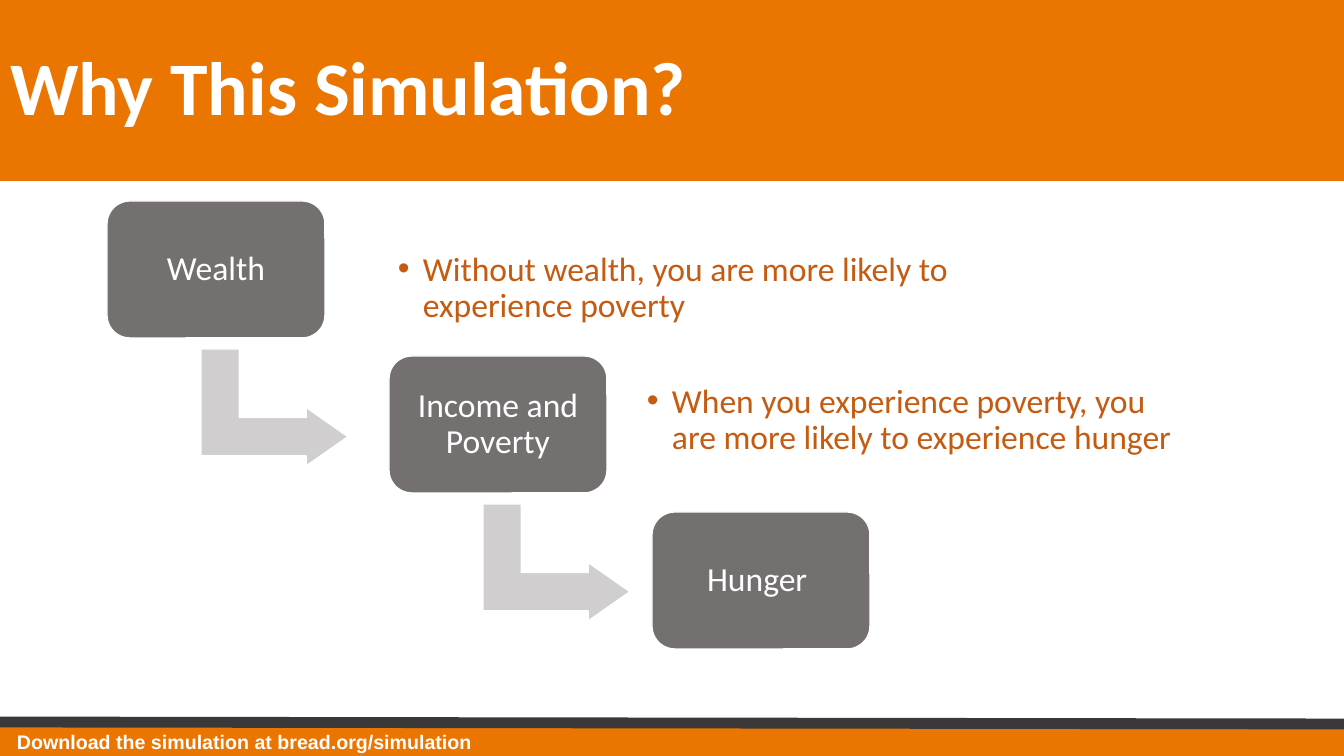
import pptx
import pptx.util
import pptx.dml.color
import pptx.enum.shapes
import pptx.enum.text
import lxml.etree

RGBColor = pptx.dml.color.RGBColor
SHAPES = pptx.enum.shapes.MSO_SHAPE
ALIGN = pptx.enum.text.PP_ALIGN
ANCHOR = pptx.enum.text.MSO_ANCHOR

ORANGE = RGBColor(0xEA, 0x75, 0x00)
RUST = RGBColor(0xC5, 0x5A, 0x11)
GREY = RGBColor(0x75, 0x70, 0x70)
PALE = RGBColor(0xD0, 0xCE, 0xCE)
CHARCOAL = RGBColor(0x3A, 0x38, 0x38)
WHITE = RGBColor(0xFF, 0xFF, 0xFF)

EMU_PER_PX = 914400 / 100.8
WIDTH, HEIGHT = 1344, 756
CARD_WIDTH, CARD_HEIGHT = 218, 137
DRAWING = "http://schemas.openxmlformats.org/drawingml/2006/main"

# Card label, card left and top, bullet text, bullet box
STEPS = [
    ("Wealth", 107, 201, "Without wealth, you are more likely to experience poverty",
     (388, 233, 659, 111)),
    ("Income and Poverty", 389, 356,
     "When you experience poverty, you are more likely to experience hunger",
     (637, 365, 563, 111)),
    ("Hunger ", 652, 512, None, None),
]


def px(length):
    return pptx.util.Emu(round(length * EMU_PER_PX))


def place(box):
    return [px(length) for length in box]


def add_child(parent, tag, **attributes):
    return lxml.etree.SubElement(parent, f"{{{DRAWING}}}{tag}", attributes)


def add_bullet(para, color, indent):
    properties = para._p.get_or_add_pPr()
    properties.set("marL", str(px(indent)))
    properties.set("indent", str(-px(indent)))
    add_child(add_child(properties, "buClr"), "srgbClr", val=str(color))
    add_child(properties, "buFont", typeface="Arial")
    add_child(properties, "buChar", char="•")


def write(shape, text, size, color=WHITE, font="Calibri", bold=False, align=ALIGN.LEFT,
          anchor=ANCHOR.MIDDLE, insets=(10, 10), spacing=0.9, bullet=False):
    frame = shape.text_frame
    frame.word_wrap = True
    frame.vertical_anchor = anchor
    frame.margin_left = frame.margin_right = px(insets[0])
    frame.margin_top = frame.margin_bottom = px(insets[1])
    para = frame.paragraphs[0]
    para.alignment = align
    para.line_spacing = spacing
    if bullet:
        add_bullet(para, color, 25)
    span = para.add_run()
    span.text = text
    span.font.name = font
    span.font.size = pptx.util.Pt(size)
    span.font.bold = bold
    span.font.color.rgb = color


def add_block(page, kind, box, fill, outline=None):
    shape = page.shapes.add_shape(kind, *place(box))
    shape.shadow.inherit = False
    shape.fill.solid()
    shape.fill.fore_color.rgb = fill
    if outline is None:
        shape.line.fill.background()
    else:
        shape.line.color.rgb = outline
        shape.line.width = pptx.util.Pt(1)
    return shape


def add_title(page, box):
    banner = add_block(page, SHAPES.RECTANGLE, box, ORANGE)
    write(banner, "Why This Simulation?", 54, bold=True, insets=(10, 5))


def add_footer(page, box):
    left, top, width, height = box
    add_block(page, SHAPES.RECTANGLE, box, ORANGE)
    # Slightly tilted rule above the strip
    rule = page.shapes.add_connector(pptx.enum.shapes.MSO_CONNECTOR.STRAIGHT,
                                     *place((left, top - 2, left + width, top)))
    rule.line.color.rgb = CHARCOAL
    rule.line.width = pptx.util.Pt(7.75)
    add_child(rule._element.spPr, "effectLst")
    note = page.shapes.add_textbox(*place((left + 7, top + 1, 701, 34)))
    write(note, "Download the simulation at bread.org/simulation", 14, font="Arial",
          bold=True, anchor=ANCHOR.TOP, insets=(10, 5), spacing=1.0)


def add_arrow(page, box):
    arrow = add_block(page, SHAPES.BENT_UP_ARROW, box, PALE, WHITE)
    arrow.rotation = 90
    for index, value in enumerate((0.328, 0.25, 0.358)):
        arrow.adjustments[index] = value


def add_step(page, box, label, bullet_text, bullet_box):
    left, top, width, height = box
    # A step with a consequence also leads on to the next card
    if bullet_text:
        add_arrow(page, (left + 109, top + 133, 117, 147))
    card = add_block(page, SHAPES.ROUNDED_RECTANGLE, box, GREY, WHITE)
    write(card, label, 24, align=ALIGN.CENTER)
    if bullet_text:
        consequence = page.shapes.add_textbox(*place(bullet_box))
        write(consequence, bullet_text, 24, color=RUST, bullet=True)


def main():
    deck = pptx.Presentation()
    deck.slide_width, deck.slide_height = px(WIDTH), px(HEIGHT)
    page = deck.slides.add_slide(deck.slide_layouts[6])
    add_footer(page, (0, 724, WIDTH, 32))
    add_title(page, (0, 0, WIDTH, 181))
    for label, left, top, bullet_text, bullet_box in STEPS:
        add_step(page, (left, top, CARD_WIDTH, CARD_HEIGHT), label, bullet_text, bullet_box)
    deck.save("out.pptx")


if __name__ == "__main__":
    main()
